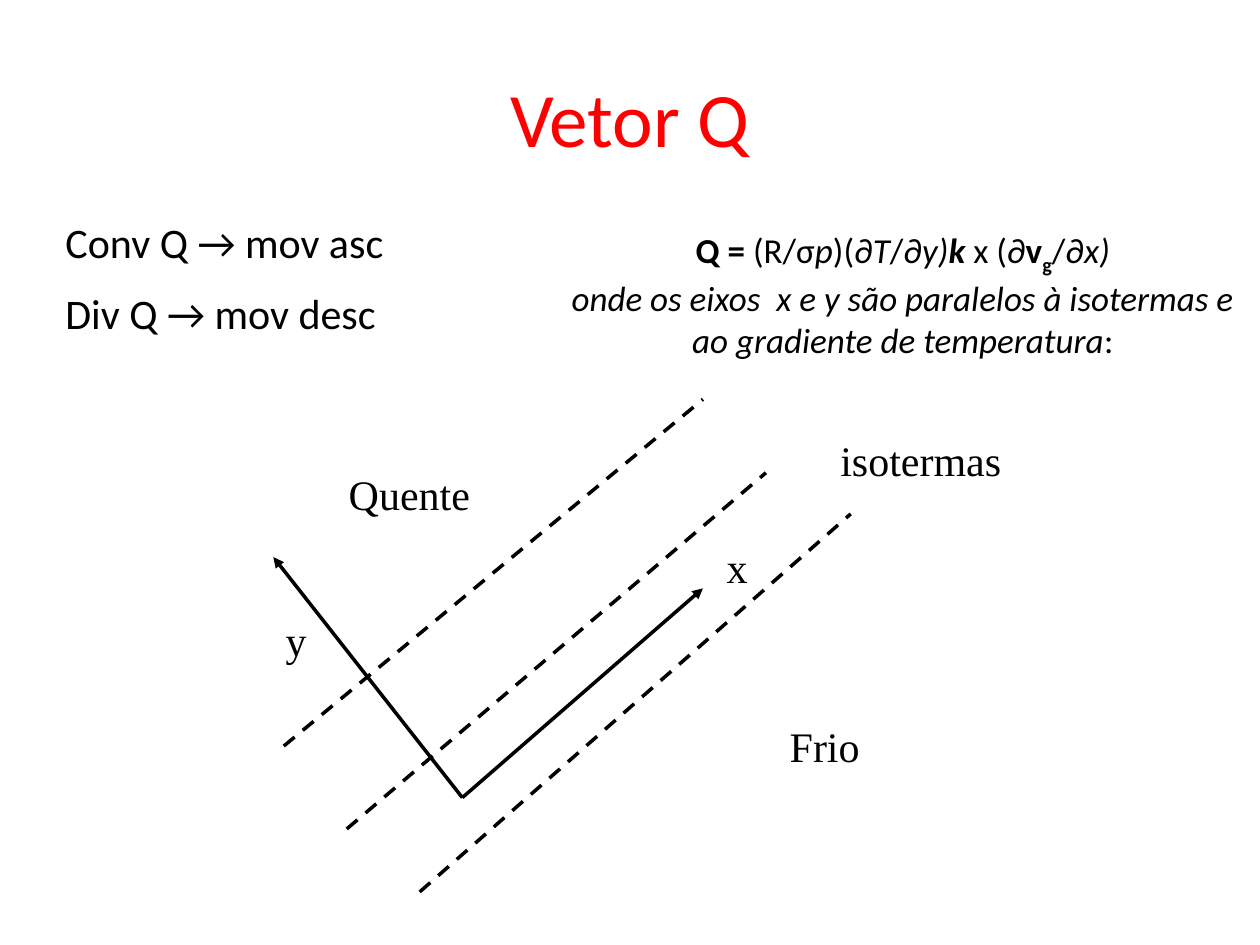
from lxml import etree
from pptx import Presentation
from pptx.dml.color import RGBColor
from pptx.enum import dml, shapes, text
from pptx.oxml.ns import qn
from pptx.util import Cm, Pt

INK = {"black": "000000", "red": "FF0000"}
SANS, SERIF = "Calibri", "Times New Roman"

FORMULA = [
    ("Q = ", "b"), ("(R/σ", ""), ("p", "i"), (")(∂", ""), ("T", "i"),
    ("/∂", ""), ("y)", "i"), ("k ", "bi"), ("x (∂", ""), ("v", "b"),
    ("g", "bs"), ("/∂", ""), ("x)", "i"), ("\n", ""),
    ("onde os eixos  x e y são paralelos à isotermas e ao gradiente de temperatura", "i"),
    (":", ""),
]
FORMULA_BOX = (11, 2.97, 14.4, 5.92)
HEAD = ("Vetor Q", (1.27, 0.76, 22.86, 3.18))
RULES = ("Conv Q → mov asc\nDiv Q → mov desc", (1.07, 4.24, 8.69, 2.79))
ORIGIN = (9.32, 16.08)
AXES = [(14.17, 11.86), (5.51, 11.23)]
ISOTHERMS = [
    ((8.46, 17.98), (17.15, 10.36)),
    ((6.99, 16.71), (15.44, 9.53)),
    ((5.72, 15.04), (14.17, 8.05)),
]
LABELS = [
    ("x", 14.4, 10.8, 0.94),
    ("y", 5.51, 12.27, 0.94),
    ("isotermas", 16.69, 8.64, 3.76),
    ("Frio", 15.67, 14.4, 1.93),
    ("Quente", 6.78, 9.32, 2.95),
]


def style(run, size, face, ink="black"):
    font = run.font
    font.size, font.name = Pt(size), face
    font.color.rgb = RGBColor.from_string(INK[ink])


def add_text(slide, words, box, size, face, ink="black", wrap=True):
    frame = slide.shapes.add_textbox(*map(Cm, box)).text_frame
    frame.word_wrap = wrap
    frame.text = words
    for para in frame.paragraphs:
        for run in para.runs:
            style(run, size, face, ink)
    return frame


def add_line(slide, start, end, arrow=False):
    line = slide.shapes.add_connector(
        shapes.MSO_CONNECTOR.STRAIGHT, *map(Cm, start + end))
    line.line.width = Pt(2)
    line.line.color.rgb = RGBColor.from_string(INK["black"])
    if arrow:
        tip = etree.SubElement(line.line._get_or_add_ln(), qn("a:tailEnd"))
        tip.set("type", "triangle")
    else:
        line.line.dash_style = dml.MSO_LINE.DASH
    etree.SubElement(line._element.spPr, qn("a:effectLst"))


def fill_title(slide):
    title = slide.shapes.title
    title.left, title.top, title.width, title.height = map(Cm, FORMULA_BOX)
    frame = title.text_frame
    frame.auto_size = text.MSO_AUTO_SIZE.NONE
    frame.vertical_anchor = text.MSO_ANCHOR.MIDDLE
    para = frame.paragraphs[0]
    para.alignment = text.PP_ALIGN.CENTER
    for words, marks in FORMULA:
        if words == "\n":
            para.add_line_break()
            continue
        run = para.add_run()
        run.text = words
        style(run, 20, SANS)
        run.font.bold, run.font.italic = "b" in marks, "i" in marks
        if "s" in marks:
            run._r.get_or_add_rPr().set("baseline", "-25000")


def main():
    deck = Presentation()
    deck.slide_width, deck.slide_height = Cm(25.4), Cm(19.05)
    slide = deck.slides.add_slide(deck.slide_layouts[5])
    fill_title(slide)
    for end in AXES:
        add_line(slide, ORIGIN, end, arrow=True)
    for start, end in ISOTHERMS:
        add_line(slide, start, end)
    for words, left, top, width in LABELS:
        add_text(slide, words, (left, top, width, 1.27), 24, SERIF, wrap=False)
    head = add_text(slide, *HEAD, 44, SANS, "red")
    head.vertical_anchor = text.MSO_ANCHOR.MIDDLE
    head.paragraphs[0].alignment = text.PP_ALIGN.CENTER
    for para in add_text(slide, *RULES, 24, SANS).paragraphs:
        para.space_before = Pt(12)
    deck.save("out.pptx")


if __name__ == "__main__":
    main()
